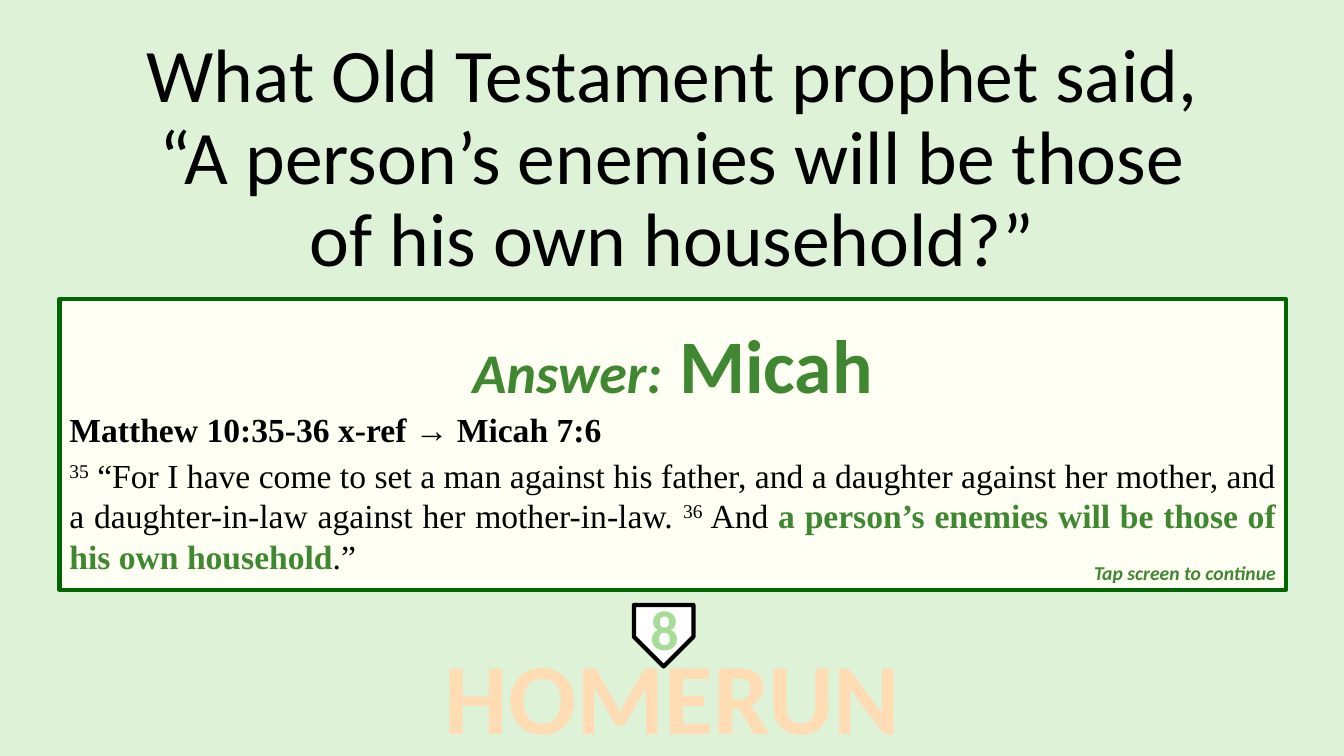
from lxml import etree
from pptx import Presentation
from pptx.dml.color import RGBColor
from pptx.enum.shapes import MSO_SHAPE
from pptx.enum.text import MSO_ANCHOR, MSO_AUTO_SIZE, PP_ALIGN
from pptx.oxml.ns import qn
from pptx.util import Cm, Pt

RECTANGLE, HOME_PLATE = MSO_SHAPE.RECTANGLE, MSO_SHAPE.PENTAGON
TOP, MIDDLE = MSO_ANCHOR.TOP, MSO_ANCHOR.MIDDLE
LEFT, CENTER, RIGHT, JUSTIFY = (PP_ALIGN.LEFT, PP_ALIGN.CENTER,
                                PP_ALIGN.RIGHT, PP_ALIGN.JUSTIFY)
NO_AUTOFIT = MSO_AUTO_SIZE.NONE

PALE_GREEN = RGBColor(0xDD, 0xF2, 0xD6)
IVORY = RGBColor(0xFF, 0xFF, 0xF3)
DARK_GREEN = RGBColor(0x00, 0x66, 0x00)
LEAF_GREEN = RGBColor(0x3F, 0x87, 0x31)
LIGHT_GREEN = RGBColor(0xA8, 0xDD, 0x97)
PEACH = RGBColor(0xFF, 0xDC, 0xB3)
WHITE = RGBColor(0xFF, 0xFF, 0xFF)
BLACK = RGBColor(0x00, 0x00, 0x00)

QUESTION = {"name": "Calibri", "size": Pt(54), "color": BLACK}
ANSWER = {"name": "Calibri", "size": Pt(54), "color": LEAF_GREEN, "bold": True}
ANSWER_LABEL = {**ANSWER, "size": Pt(40), "italic": True}
HINT = {**ANSWER_LABEL, "size": Pt(14)}
VERSE = {"name": "Times New Roman", "size": Pt(24), "color": BLACK, "bold": False}
REFERENCE = {**VERSE, "bold": True}
KEY_PHRASE = {**REFERENCE, "color": LEAF_GREEN}
VERSE_NUMBER = {**VERSE, "superscript": True}
HIT = {"name": "Calibri", "size": Pt(72), "color": PEACH, "bold": True, "outlined": True}
NUMBER = {**HIT, "size": Pt(40), "color": LIGHT_GREEN}

QUESTION_LINES = [
    "What Old Testament prophet said,",
    "“A person’s enemies will be those",
    "of his own household?”",
]
PASSAGE = [
    ("35", VERSE_NUMBER),
    (" “For I have come to set a man against his father, and a daughter against "
     "her mother, and a daughter-in-law against her mother-in-law. ", VERSE),
    ("36", VERSE_NUMBER),
    (" And ", VERSE),
    ("a person’s enemies will be those of his own household", KEY_PHRASE),
    (".”", VERSE),
]


def outline_letters(properties):
    line = etree.Element(qn("a:ln"), w=str(Pt(2.25)))
    fill = etree.SubElement(line, qn("a:solidFill"))
    etree.SubElement(fill, qn("a:srgbClr"), val=str(BLACK))
    properties.insert(0, line)


def add_run(paragraph, text, style):
    run = paragraph.add_run()
    run.text = text
    for key, value in style.items():
        if key == "color":
            run.font.color.rgb = value
        elif key == "superscript":
            run._r.get_or_add_rPr().set("baseline", "30000")
        elif key == "outlined":
            outline_letters(run._r.get_or_add_rPr())
        else:
            setattr(run.font, key, value)


def write(shape, paragraphs, anchor=TOP, wrap=True):
    """Fill a shape with (paragraph format, [(text, style), ...]) pairs."""
    frame = shape.text_frame
    frame.auto_size = NO_AUTOFIT
    frame.word_wrap = wrap
    frame.vertical_anchor = anchor
    for index, (layout, runs) in enumerate(paragraphs):
        paragraph = frame.add_paragraph() if index else frame.paragraphs[0]
        for key, value in layout.items():
            setattr(paragraph, key, value)
        for text, style in runs:
            add_run(paragraph, text, style)


def add_label(slide, box, text, style, alignment, wrap=False):
    label = slide.shapes.add_textbox(*map(Cm, box))
    write(label, [({"alignment": alignment}, [(text, style)])], wrap=wrap)


def add_panel(slide, preset, box, fill, border):
    panel = slide.shapes.add_shape(preset, *map(Cm, box))
    panel.shadow.inherit = False
    panel.fill.solid()
    panel.fill.fore_color.rgb = fill
    panel.line.color.rgb = border
    panel.line.width = Pt(3)
    return panel


def place_question(slide):
    question = slide.shapes.title
    question.left, question.top, question.width, question.height = map(
        Cm, (0.43, 0.79, 33.02, 6.48))
    layout = {"alignment": CENTER, "line_spacing": 0.9, "space_before": Pt(0)}
    write(question, [(layout, [(line, QUESTION)]) for line in QUESTION_LINES], MIDDLE)


def add_answer(slide):
    answer = add_panel(slide, RECTANGLE, (1.5, 7.54, 30.91, 7.32), IVORY, DARK_GREEN)
    answer.text_frame.margin_top = Cm(0.48)
    write(answer, [
        ({"alignment": CENTER}, [("Answer:", ANSWER_LABEL), (" Micah", ANSWER)]),
        ({"alignment": LEFT, "space_after": Pt(4)},
         [("Matthew 10:35-36 x-ref → Micah 7:6", REFERENCE)]),
        ({"alignment": JUSTIFY}, PASSAGE),
    ])


def main():
    deck = Presentation()
    deck.slide_width, deck.slide_height = Cm(33.87), Cm(19.05)
    slide = deck.slides.add_slide(deck.slide_layouts.get_by_name("Title Only"))
    slide.background.fill.solid()
    slide.background.fill.fore_color.rgb = PALE_GREEN

    place_question(slide)
    add_answer(slide)
    add_label(slide, (27.05, 14, 5.36, 0.86), "Tap screen to continue", HINT, RIGHT, wrap=True)
    add_label(slide, (10.87, 15.85, 12.17, 3.33), "HOMERUN", HIT, CENTER)
    plate = add_panel(slide, HOME_PLATE, (15.95, 15.27, 1.55, 1.5), WHITE, BLACK)
    plate.rotation = 90
    add_label(slide, (16.13, 14.86, 1.24, 1.96), "8", NUMBER, CENTER)

    deck.save("out.pptx")


if __name__ == "__main__":
    main()
